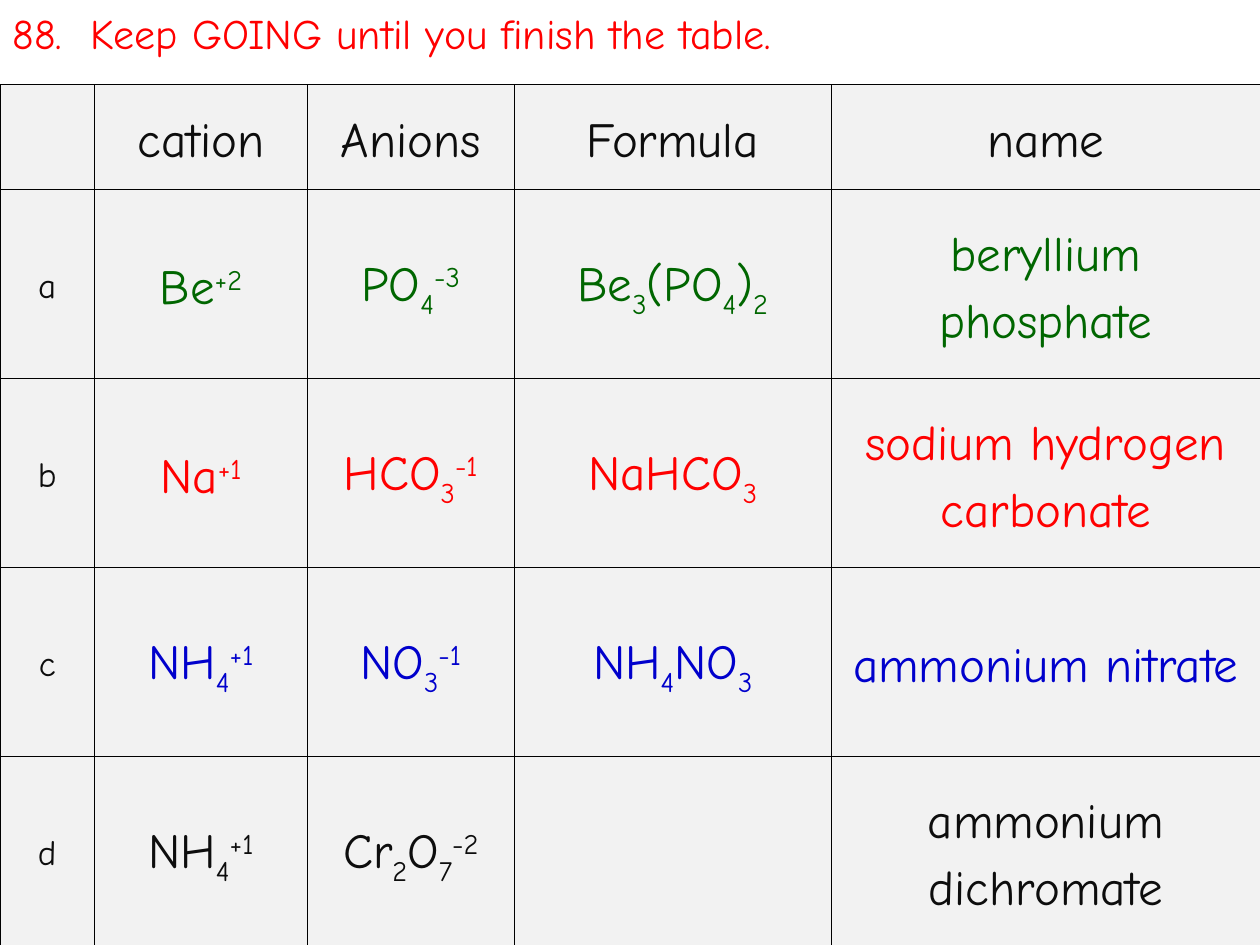
from dataclasses import dataclass
from itertools import groupby

from lxml.etree import SubElement
from pptx import Presentation
from pptx.dml.color import RGBColor
from pptx.enum.text import MSO_ANCHOR, MSO_AUTO_SIZE, PP_ALIGN
from pptx.oxml.ns import qn
from pptx.util import Inches, Pt

FONT = "Comic Neue"
INK, RED, GREEN, BLUE = "0D0D0D", "FF0000", "006600", "0000CC"
SUB, SUPER = -25, 30


@dataclass
class Row:
    label: str
    cells: list[str]
    color: str = INK
    height: float = 1.5


# Digits are subscripts; what follows ^ is the charge
ROWS = [
    Row("", ["cation", "Anions", "Formula", "name"], height=0.83),
    Row("a", ["Be^+2", "PO4^-3", "Be3(PO4)2", "beryllium phosphate"], GREEN),
    Row("b", ["Na^+1", "HCO3^-1", "NaHCO3", "sodium hydrogen carbonate"], RED),
    Row("c", ["NH4^+1", "NO3^-1", "NH4NO3", "ammonium nitrate"], BLUE),
    Row("d", ["NH4^+1", "Cr2O7^-2", "", "ammonium dichromate"]),
]
WIDTHS = [0.75, 1.69, 1.64, 2.52, 3.4]


def rgb(code: str) -> RGBColor:
    return RGBColor.from_string(code)


def split(text: str) -> list[tuple[str, int]]:
    """Cut a formula into runs, each with its baseline shift."""
    body, _, charge = text.partition("^")
    parts = [("".join(run), SUB if low else 0)
             for low, run in groupby(body, str.isdigit)]
    return parts + [(charge, SUPER)] if charge else parts


def write(frame, text: str, *, size: float, color: str, align=PP_ALIGN.LEFT,
          lines: float = 1.0, formula: bool = False) -> None:
    para = frame.paragraphs[0]
    para.alignment = align
    para.line_spacing = lines
    for part, shift in split(text) if formula else [(text, 0)]:
        run = para.add_run()
        run.text = part
        run.font.name = FONT
        run.font.size = Pt(size)
        run.font.color.rgb = rgb(color)
        if shift:
            run.font._element.set("baseline", str(shift * 1000))


def border(cell, color: str = "000000", width: float = 0.5) -> None:
    props = cell._tc.get_or_add_tcPr()
    for spot, side in enumerate(("lnL", "lnR", "lnT", "lnB")):
        line = SubElement(props, qn(f"a:{side}"), w=str(Pt(width)))
        fill = SubElement(line, qn("a:solidFill"))
        SubElement(fill, qn("a:srgbClr"), val=color)
        props.insert(spot, line)


def fill_cell(cell, text: str, size: float, color: str) -> None:
    cell.fill.solid()
    cell.fill.fore_color.rgb = rgb("F2F2F2")
    border(cell)
    cell.vertical_anchor = MSO_ANCHOR.MIDDLE
    if text:
        write(cell.text_frame, text, size=size, color=color,
              align=PP_ALIGN.CENTER, lines=1.19, formula=True)


def main() -> None:
    deck = Presentation()
    deck.slide_width, deck.slide_height = Inches(10), Inches(7.5)
    slide = deck.slides.add_slide(deck.slide_layouts[5])

    # Title
    title = slide.shapes.title
    title.left, title.top = Inches(0), Inches(0.01)
    title.width, title.height = Inches(10), Inches(0.5)
    frame = title.text_frame
    frame.word_wrap = True
    frame.auto_size = MSO_AUTO_SIZE.SHAPE_TO_FIT_TEXT
    frame.vertical_anchor = MSO_ANCHOR.TOP
    write(frame, "88.  Keep GOING until you finish the table.",
          size=24, color=RED)

    # Table of ions
    high = sum(row.height for row in ROWS)
    table = slide.shapes.add_table(
        len(ROWS), len(WIDTHS), Inches(0), Inches(0.67),
        Inches(10), Inches(high)).table
    table.first_row = table.horz_banding = False
    for col, width in zip(table.columns, WIDTHS):
        col.width = Inches(width)
    for r, row in enumerate(ROWS):
        table.rows[r].height = Inches(row.height)
        fill_cell(table.cell(r, 0), row.label, 20, INK)
        for c, text in enumerate(row.cells, 1):
            fill_cell(table.cell(r, c), text, 28, row.color)

    deck.save("out.pptx")


if __name__ == "__main__":
    main()
